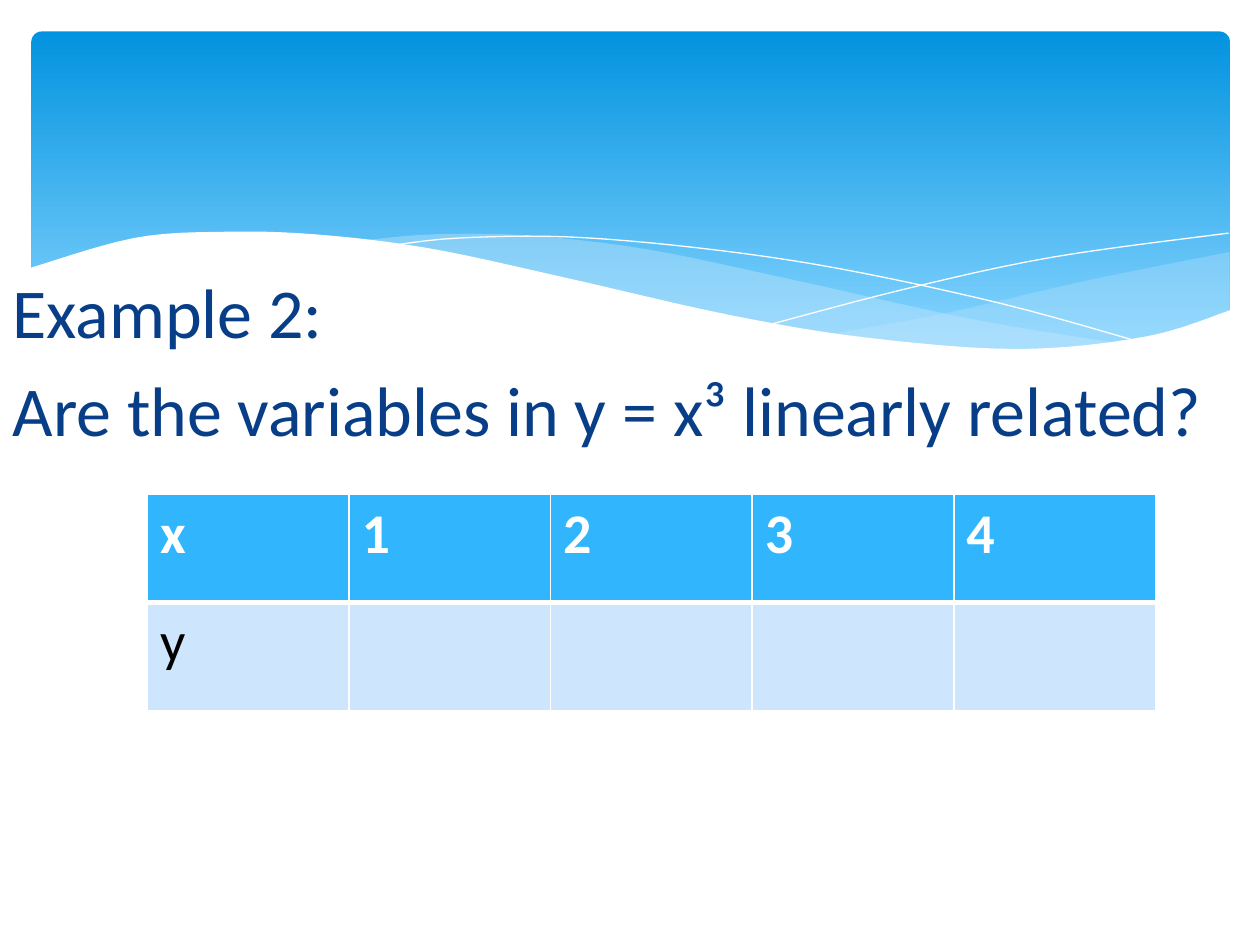
"""Build the slide that asks whether y = x³ is a linear relation."""
from dataclasses import dataclass

from lxml import etree
from pptx import Presentation
from pptx.dml.color import RGBColor
from pptx.enum.shapes import MSO_SHAPE
from pptx.enum.text import MSO_ANCHOR, MSO_AUTO_SIZE, PP_ALIGN
from pptx.oxml.ns import qn
from pptx.util import Inches, Pt

ROUND = MSO_SHAPE.ROUNDED_RECTANGLE
TOP = MSO_ANCHOR.TOP
FIXED = MSO_AUTO_SIZE.NONE
LEFT = PP_ALIGN.LEFT
FONT = "Calibri"
STEPS = 6
HEX = {
    "white": "FFFFFF", "black": "000000", "navy": "073E87",
    "deep": "0293E0", "sky": "83D3FE", "mist": "C6E7FC",
    "head": "31B6FD", "body": "CEE5FE",
}
Point = tuple[float, float]


@dataclass
class Wave:
    curves: list[list[Point]]
    fill: str | None = None
    alpha: int = 100


WAVES = [
    Wave([[(9.76, 2), (8.61, 2.23), (7.53, 2.48), (6.61, 2.65)],
          [(6.61, 2.65), (7.45, 2.75), (8.24, 2.77), (9.05, 2.69),
           (9.76, 2.47)]], "mist", 29),
    Wave([[(8.93, 2.73), (7.75, 2.54), (6.29, 2.22), (5.14, 1.98),
           (4.2, 1.87), (3.44, 1.86), (2.86, 1.91)],
          [(2.86, 1.91), (4.49, 2.22), (5.66, 2.48), (6.8, 2.68),
           (7.85, 2.78), (8.93, 2.73)]], "mist", 40),
    Wave([[(3.09, 1.95), (3.63, 1.89), (4.5, 1.88), (5.56, 1.97),
           (6.65, 2.13), (7.95, 2.41), (9.07, 2.72)]]),
    Wave([[(6.13, 2.57), (7.2, 2.29), (8.36, 2.04), (9.75, 1.85)]]),
    Wave([[(9.77, 2.46), (9.1, 2.67), (8.09, 2.77), (6.88, 2.68),
           (5.79, 2.5), (4.47, 2.2), (3.4, 1.97), (2.5, 1.86),
           (1.77, 1.84), (1.06, 1.89), (0.23, 2.13)],
          [(0.23, 3.29), (9.77, 3.29)]], "white"),
]
ROWS = [["x", "1", "2", "3", "4"], ["y", "", "", "", ""]]


def tint(name: str) -> RGBColor:
    """Return a named colour."""
    return RGBColor.from_string(HEX[name])


def blend(a: float, b: float, c: float, d: float, t: float) -> float:
    """Return the Catmull-Rom value between b and c."""
    return b + t / 2 * (c - a + t * (2 * a - 5 * b + 4 * c - d
                                     + t * (3 * (b - c) + d - a)))


def smooth(knots: list[Point]) -> list[Point]:
    """Return points along a spline through the knots."""
    ends = [knots[0], *knots, knots[-1]]
    spans = zip(ends, ends[1:], ends[2:], ends[3:])
    points = [tuple(blend(*axis, step / STEPS) for axis in zip(*span))
              for span in spans for step in range(STEPS)]
    return [*points, knots[-1]]


def write(para, text: str, *, size: float, color: str, bold: bool = False,
          before: float = 0) -> None:
    """Fill a paragraph with formatted text."""
    para.alignment = LEFT
    para.space_before = Pt(before)
    run = para.add_run()
    run.text = text
    run.font.name = FONT
    run.font.size = Pt(size)
    run.font.bold = bold
    run.font.color.rgb = tint(color)


def draw_band(slide) -> None:
    """Draw the blue gradient band."""
    band = slide.shapes.add_shape(
        ROUND, Inches(0.25), Inches(0.25), Inches(9.51), Inches(2.7))
    band.adjustments[0] = 0.03
    band.shadow.inherit = False
    band.line.fill.background()
    band.fill.gradient()
    band.fill.gradient_angle = 270
    stops = zip(band.fill.gradient_stops, [(0, "deep"), (0.9, "sky")])
    for stop, (place, color) in stops:
        stop.position = place
        stop.color.rgb = tint(color)


def draw_wave(slide, wave: Wave) -> None:
    """Draw a filled wave or a hairline curve."""
    first, *rest = [(Inches(x), Inches(y))
                    for curve in wave.curves for x, y in smooth(curve)]
    pen = slide.shapes.build_freeform(*first)
    pen.add_line_segments(rest, close=wave.fill is not None)
    shape = pen.convert_to_shape()
    shape.shadow.inherit = False
    if wave.fill is None:
        shape.fill.background()
        shape.line.color.rgb = tint("white")
        shape.line.width = Pt(0)
        return
    shape.line.fill.background()
    shape.fill.solid()
    shape.fill.fore_color.rgb = tint(wave.fill)
    if wave.alpha < 100:
        color = shape.element.spPr.find(qn("a:solidFill"))[0]
        etree.SubElement(color, qn("a:alpha"), val=str(wave.alpha * 1000))


def draw_text(slide, body) -> None:
    """Place the question above the waves."""
    slide.shapes.element.append(body.element)
    body.left, body.top = Inches(0), Inches(2.08)
    body.width, body.height = Inches(9.83), Inches(3.77)
    frame = body.text_frame
    frame.word_wrap = True
    frame.auto_size = FIXED
    frame.vertical_anchor = TOP
    lines = ["Example 2:", "Are the variables in y = x³ linearly related?"]
    for index, line in enumerate(lines):
        para = frame.add_paragraph() if index else frame.paragraphs[0]
        write(para, line, size=40, color="navy", before=8)
        props = para._p.get_or_add_pPr()
        props.set("marL", "0")
        props.set("indent", "0")
        etree.SubElement(props, qn("a:buNone"))


def edge(cell, side: str, width: float) -> None:
    """Add one white border to a cell."""
    props = cell._tc.get_or_add_tcPr()
    line = etree.SubElement(props, qn(f"a:ln{side}"), w=str(Pt(width)))
    fill = etree.SubElement(line, qn("a:solidFill"))
    etree.SubElement(fill, qn("a:srgbClr"), val=HEX["white"])


def draw_table(slide) -> None:
    """Draw the table of x and y values."""
    table = slide.shapes.add_table(
        len(ROWS), len(ROWS[0]), Inches(1.17), Inches(3.92),
        Inches(8), Inches(1.72)).table
    for r, row in enumerate(ROWS):
        head = r == 0
        for c, text in enumerate(row):
            cell = table.cell(r, c)
            widths = {"L": 1, "R": 1, "T": 1 if head else 3,
                      "B": 3 if head else 1}
            for side, width in widths.items():
                edge(cell, side, width)
            cell.fill.solid()
            cell.fill.fore_color.rgb = tint("head" if head else "body")
            if text:
                write(cell.text_frame.paragraphs[0], text, size=32,
                      color="white" if head else "black", bold=head)


def main() -> None:
    """Build and save the slide."""
    deck = Presentation()
    deck.slide_width, deck.slide_height = Inches(10), Inches(7.5)
    slide = deck.slides.add_slide(deck.slide_layouts[1])
    title = slide.shapes.title.element
    title.getparent().remove(title)
    draw_band(slide)
    for wave in WAVES:
        draw_wave(slide, wave)
    draw_text(slide, slide.placeholders[1])
    draw_table(slide)
    deck.save("out.pptx")


if __name__ == "__main__":
    main()
